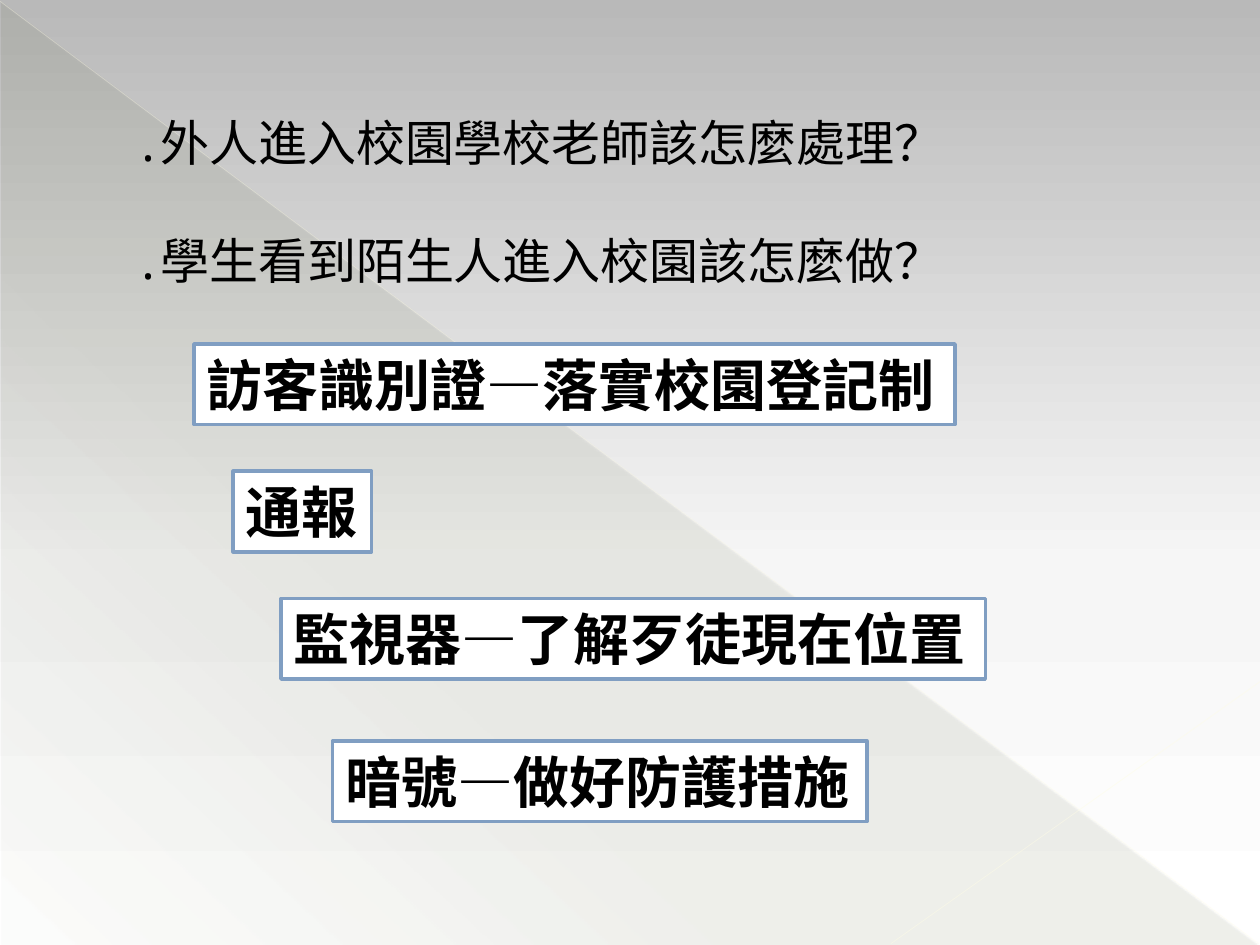
from dataclasses import dataclass

from lxml.etree import SubElement
from pptx import Presentation
from pptx.dml.color import RGBColor
from pptx.enum.shapes import MSO_CONNECTOR, MSO_SHAPE
from pptx.enum.text import MSO_ANCHOR, MSO_AUTO_SIZE, PP_ALIGN
from pptx.oxml.ns import qn
from pptx.util import Inches, Pt


@dataclass(frozen=True)
class Theme:
    font: str = "Noto Sans CJK SC"
    ink: str = "000000"
    card_fill: str = "FFFFFF"
    card_line: str = "809EC2"
    card_line_width: float = 2
    question_size: int = 28
    answer_size: int = 32
    # Gradient stops: position, colour, opacity in percent
    sky: tuple = ((0, "B9B9B9", 100), (60, "F6F6F6", 100), (100, "FFFFFF", 100))
    shade: tuple = ((0, "444D26", 10), (70, "444D26", 8), (100, "444D26", 1))
    diagonal: str = "FFFDE3"
    corner: str = "FFFDE6"


THEME = Theme()

QUESTIONS = ("․外人進入校園學校老師該怎麼處理？", "․學生看到陌生人進入校園該怎麼做？")

# Left, top, width, text
ANSWERS = (
    (1.54, 2.73, 6.04, "訪客識別證—落實校園登記制"),
    (1.85, 3.74, 1.10, "通報"),
    (2.23, 4.75, 5.59, "監視器—了解歹徒現在位置"),
    (2.64, 5.88, 4.24, "暗號—做好防護措施"),
)
ANSWER_HEIGHT = 0.64


def set_opacity(color, percent):
    if percent < 100:
        SubElement(color, qn("a:alpha"), val=str(percent * 1000))


def set_gradient(fill, owner, stops, angle):
    """Fill with any number of stops; the angle runs clockwise."""
    fill.gradient()
    gradient = next(owner.iter(qn("a:gradFill")))
    for child in list(gradient):
        gradient.remove(child)
    stop_list = SubElement(gradient, qn("a:gsLst"))
    for position, color, opacity in stops:
        stop = SubElement(stop_list, qn("a:gs"), pos=str(position * 1000))
        set_opacity(SubElement(stop, qn("a:srgbClr"), val=color), opacity)
    SubElement(gradient, qn("a:lin"), ang=str(angle * 60000), scaled="0")


def add_line(page, start, end, color, width, opacity):
    points = [Inches(value) for value in (*start, *end)]
    line = page.shapes.add_connector(MSO_CONNECTOR.STRAIGHT, *points)
    line.line.color.rgb = RGBColor.from_string(color)
    line.line.width = Pt(width)
    set_opacity(next(line.element.iter(qn("a:srgbClr"))), opacity)
    SubElement(line.element.spPr, qn("a:effectLst"))


def add_backdrop(page, left, top, width, height):
    set_gradient(page.background.fill, page._element, THEME.sky, 90)
    shade = page.shapes.add_shape(
        MSO_SHAPE.RIGHT_TRIANGLE, Inches(left + 0.01), Inches(top + 0.02),
        Inches(width - 0.02), Inches(height - 0.02))
    shade.shadow.inherit = False
    set_gradient(shade.fill, shade.element.spPr, THEME.shade, 133)
    shade.line.fill.background()
    right, bottom = left + width, top + height - 0.01
    add_line(page, (left, top + 0.01), (right - 0.01, bottom),
             THEME.diagonal, 0.39, 35)
    add_line(page, (right, top + 5.41), (left + 7.07, bottom),
             THEME.corner, 0.47, 45)


def write_text(box, text, *, size, bold=False):
    frame = box.text_frame
    frame.word_wrap = False
    frame.auto_size = MSO_AUTO_SIZE.SHAPE_TO_FIT_TEXT
    frame.vertical_anchor = MSO_ANCHOR.TOP
    para = frame.paragraphs[0]
    para.alignment = PP_ALIGN.LEFT
    span = para.add_run()
    span.text = text
    span.font.name = THEME.font
    span.font.size = Pt(size)
    span.font.bold = bold
    span.font.color.rgb = RGBColor.from_string(THEME.ink)
    latin = next(span.font._element.iter(qn("a:latin")))
    east_asian = latin.makeelement(qn("a:ea"), {"typeface": THEME.font})
    latin.addnext(east_asian)


def add_questions(page, left, top, width, height, pitch):
    for index, question in enumerate(QUESTIONS):
        box = page.shapes.add_textbox(
            Inches(left), Inches(top + index * pitch), Inches(width), Inches(height))
        write_text(box, question, size=THEME.question_size)


def add_answer(page, left, top, width, height, text):
    card = page.shapes.add_shape(
        MSO_SHAPE.RECTANGLE, Inches(left), Inches(top), Inches(width), Inches(height))
    card.shadow.inherit = False
    card.fill.solid()
    card.fill.fore_color.rgb = RGBColor.from_string(THEME.card_fill)
    card.line.color.rgb = RGBColor.from_string(THEME.card_line)
    card.line.width = Pt(THEME.card_line_width)
    write_text(card, text, size=THEME.answer_size, bold=True)


def main():
    deck = Presentation()
    deck.slide_width, deck.slide_height = Inches(10), Inches(7.5)
    page = deck.slides.add_slide(deck.slide_layouts[6])
    add_backdrop(page, 0, 0, 10, 7.5)
    add_questions(page, 0.98, 0.84, 6.88, 0.57, pitch=0.94)
    for left, top, width, text in ANSWERS:
        add_answer(page, left, top, width, ANSWER_HEIGHT, text)
    deck.save("out.pptx")


if __name__ == "__main__":
    main()
